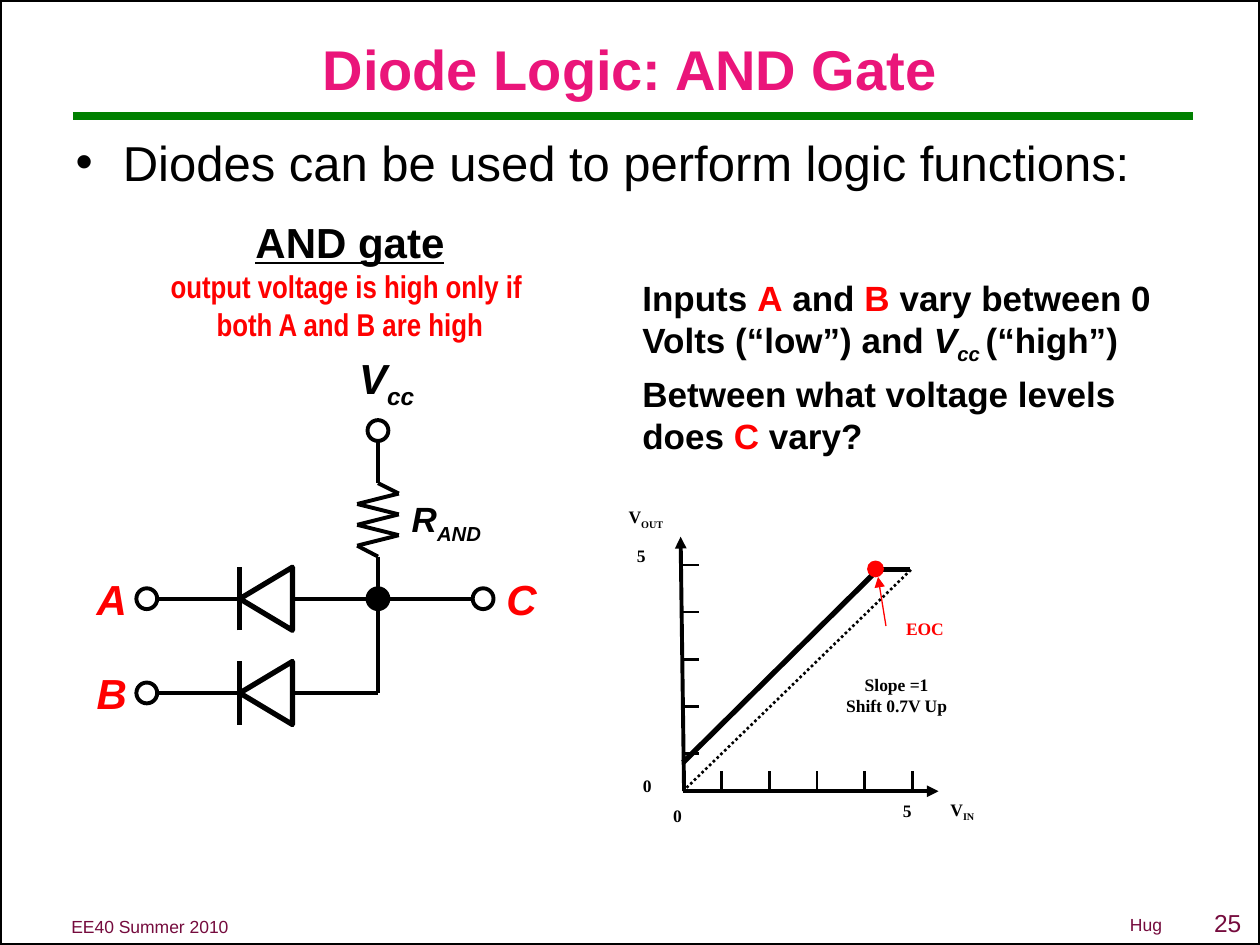
from itertools import pairwise

from lxml.etree import SubElement
from pptx import Presentation
from pptx.dml.color import RGBColor
from pptx.enum.dml import MSO_LINE
from pptx.enum.shapes import MSO_CONNECTOR, MSO_SHAPE
from pptx.enum.text import MSO_ANCHOR, MSO_AUTO_SIZE, PP_ALIGN
from pptx.oxml.ns import qn
from pptx.util import Cm, Pt

BLACK = RGBColor(0x00, 0x00, 0x00)
RED = RGBColor(0xFF, 0x00, 0x00)
GREEN = RGBColor(0x00, 0x80, 0x00)
PINK = RGBColor(0xEA, 0x15, 0x7A)
PLUM = RGBColor(0x75, 0x0B, 0x3D)
SERIF = "Times New Roman"

deck = Presentation()
deck.slide_width, deck.slide_height = Cm(25.4), Cm(19.05)
page = deck.slides.add_slide(deck.slide_layouts[1])


def draw_line(x1, y1, x2, y2, width=2.25, color=BLACK, arrow=False, dash=None):
    line = page.shapes.add_connector(
        MSO_CONNECTOR.STRAIGHT, Cm(x1), Cm(y1), Cm(x2), Cm(y2))
    line.line.width = Pt(width)
    line.line.color.rgb = color
    if dash:
        line.line.dash_style = dash
    properties = line._element.spPr
    if arrow:
        SubElement(properties.find(qn("a:ln")), qn("a:tailEnd"), type="triangle")
    SubElement(properties, qn("a:effectLst"))


def write(left, top, width, height, lines, size, color=BLACK, font="Arial",
          bold=True, align=PP_ALIGN.LEFT, wrap=False):
    """Add a text box; each line is a list of (text, marks) spans.

    Marks: r red, i italic, u underlined, s subscript.
    """
    box = page.shapes.add_textbox(Cm(left), Cm(top), Cm(width), Cm(height))
    frame = box.text_frame
    frame.word_wrap = wrap
    frame.auto_size = MSO_AUTO_SIZE.SHAPE_TO_FIT_TEXT
    for index, spans in enumerate(lines):
        para = frame.paragraphs[0] if index == 0 else frame.add_paragraph()
        para.alignment = align
        para.font.size, para.font.name, para.font.bold = Pt(size), font, bold
        for text, marks in spans:
            span = para.add_run()
            span.text = text
            span.font.color.rgb = RED if "r" in marks else color
            span.font.italic = "i" in marks
            span.font.underline = "u" in marks
            if "s" in marks:
                span._r.get_or_add_rPr().set("baseline", "-25000")
    return frame


# Page frame, rule and footer
border = page.shapes.add_shape(
    MSO_SHAPE.RECTANGLE, 0, 0, deck.slide_width, deck.slide_height)
border.shadow.inherit = False
border.fill.background()
border.line.color.rgb = BLACK
border.line.width = Pt(2.25)
draw_line(1.47, 2.34, 24.05, 2.34, 4.5, GREEN)
write(1.19, 18.34, 3.71, 0.69, [[("EE40 Summer 2010", "")]], 10, PLUM, bold=False)
write(22.53, 18.31, 1.17, 0.69, [[("Hug", "")]], 10, PLUM, bold=False)
write(24.1, 18.19, 1.3, 0.86, [[("25", "")]], 14, PLUM, bold=False,
      align=PP_ALIGN.CENTER, wrap=True)

# Title and list
title, body = page.placeholders
title.left, title.top, title.width, title.height = Cm(1.27), Cm(0.64), Cm(22.86), Cm(1.47)
title.text_frame.text = "Diode Logic: AND Gate"
title.text_frame.vertical_anchor = MSO_ANCHOR.MIDDLE
body.left, body.top, body.width, body.height = Cm(1.27), Cm(2.54), Cm(22.86), Cm(2.24)
body.text_frame.text = "Diodes can be used to perform logic functions:"
for holder, size, color in ((title, 32, PINK), (body, 28, BLACK)):
    font = holder.text_frame.paragraphs[0].font
    font.name, font.size, font.color.rgb = "Arial", Pt(size), color
    font.bold = holder is title

# Explanations
heading = write(3.18, 4.24, 7.75, 2.79,
                [[("AND gate", "u")],
                 [("output voltage is high only if ", "r")],
                 [("both A and B are high", "r")]],
                18, font="Arial Narrow", align=PP_ALIGN.CENTER)
heading.paragraphs[0].font.name = "Arial"
heading.paragraphs[0].font.size = Pt(24)
question = write(12.7, 5.44, 11.3, 3.81,
                 [[("Inputs ", ""), ("A", "r"), (" and ", ""), ("B", "r"),
                   (" vary between 0 Volts (“low”) and ", ""), ("V", "i"),
                   ("cc ", "is"), ("(“high”)", "")],
                  [("Between what voltage levels does ", ""), ("C", "r"),
                   (" vary?", "")]],
                 20, wrap=True)
question.paragraphs[1].space_before = Pt(4)

# Circuit: two diode rows joined at the node, resistor up to the supply
node_x, row_a, row_b = 7.62, 12.07, 13.97
supply_y, input_x, output_x = 8.68, 2.96, 9.74
for row in (row_a, row_b):
    draw_line(3.15, row, 4.83, row)
    diode = page.shapes.add_shape(
        MSO_SHAPE.ISOSCELES_TRIANGLE, Cm(4.73), Cm(row - 0.53), Cm(1.27), Cm(1.06))
    diode.rotation = 270
    diode.shadow.inherit = False
    diode.fill.background()
    diode.line.color.rgb = BLACK
    diode.line.width = Pt(3)
    draw_line(4.83, row + 0.64, 4.83, row - 0.64, 3)
draw_line(5.9, row_a, 9.53, row_a)
draw_line(5.9, row_b, node_x, row_b)
draw_line(node_x, row_a, node_x, row_b)

zigzag = [(node_x + (0.42 if i % 2 == 0 else -0.42), 9.95 + 0.21 * i) for i in range(6)]
resistor = [(node_x, 8.89), (node_x, 9.74), *zigzag, (node_x, 11.22), (node_x, row_a)]
for start, end in pairwise(resistor):
    draw_line(*start, *end)

terminals = [(input_x, row_a), (input_x, row_b), (output_x, row_a),
             (node_x, supply_y), (node_x, row_a)]
for x, y in terminals:
    terminal = page.shapes.add_shape(
        MSO_SHAPE.OVAL, Cm(x - 0.21), Cm(y - 0.21), Cm(0.42), Cm(0.42))
    terminal.shadow.inherit = False
    terminal.line.color.rgb = BLACK
    terminal.line.width = Pt(2.25)
    if (x, y) == (node_x, row_a):
        terminal.fill.solid()
        terminal.fill.fore_color.rgb = BLACK
    else:
        terminal.fill.background()

for name, x, y in (("A", 1.7, row_a), ("B", 1.7, row_b), ("C", 9.96, row_a)):
    write(x, y - 0.64, 1.12, 1.27, [[(name, "ri")]], 24)
write(8.05, 9.91, 2.57, 1.09, [[("R", "i"), ("AND", "is")]], 20, wrap=True)
write(6.99, 6.99, 1.7, 1.27, [[("V", "i"), ("cc", "is")]], 24)

# Transfer curve: axes, ticks, lines
draw_line(13.77, 15.95, 18.92, 15.95, arrow=True)
draw_line(13.79, 15.95, 13.72, 10.82, arrow=True)
for i in range(5):
    tick_x, tick_y = 14.55 + 0.96 * i, 15.19 - 0.95 * i
    draw_line(tick_x, 15.55, tick_x, 15.93, 1.5)
    draw_line(13.74, tick_y, 14.1, tick_y, 1.5)
draw_line(13.84, 15.88, 18.39, 11.46, 1.5, dash=MSO_LINE.ROUND_DOT)
draw_line(13.77, 15.37, 17.7, 11.48, 3)
draw_line(17.7, 11.48, 18.34, 11.48, 3)

plot_labels = [
    (12.37, 10.08, 1.3, [[("V", ""), ("OUT", "s")]]),
    (18.69, 15.98, 1.42, [[("V", ""), ("IN", "s")]]),
    (12.95, 16.1, 1.42, [[("0", "")]]),
    (17.58, 16, 1.42, [[("5", "")]]),
    (12.34, 15.49, 1.42, [[("0", "")]]),
    (12.22, 10.87, 1.42, [[("5", "")]]),
    (16.79, 13.46, 2.57, [[("Slope =1", "")], [("Shift 0.7V Up", "")]]),
    (18.01, 12.34, 1.27, [[("EOC", "r")]]),
]
for left, top, width, lines in plot_labels:
    write(left, top, width, 0.69 if len(lines) == 1 else 1.09, lines, 10,
          font=SERIF, align=PP_ALIGN.CENTER)

draw_line(17.86, 12.62, 17.7, 11.63, 0.75, RED, arrow=True)
corner = page.shapes.add_shape(MSO_SHAPE.OVAL, Cm(17.48), Cm(11.3), Cm(0.34), Cm(0.34))
corner.shadow.inherit = False
corner.fill.solid()
corner.fill.fore_color.rgb = RED
corner.line.fill.background()

deck.save("out.pptx")
